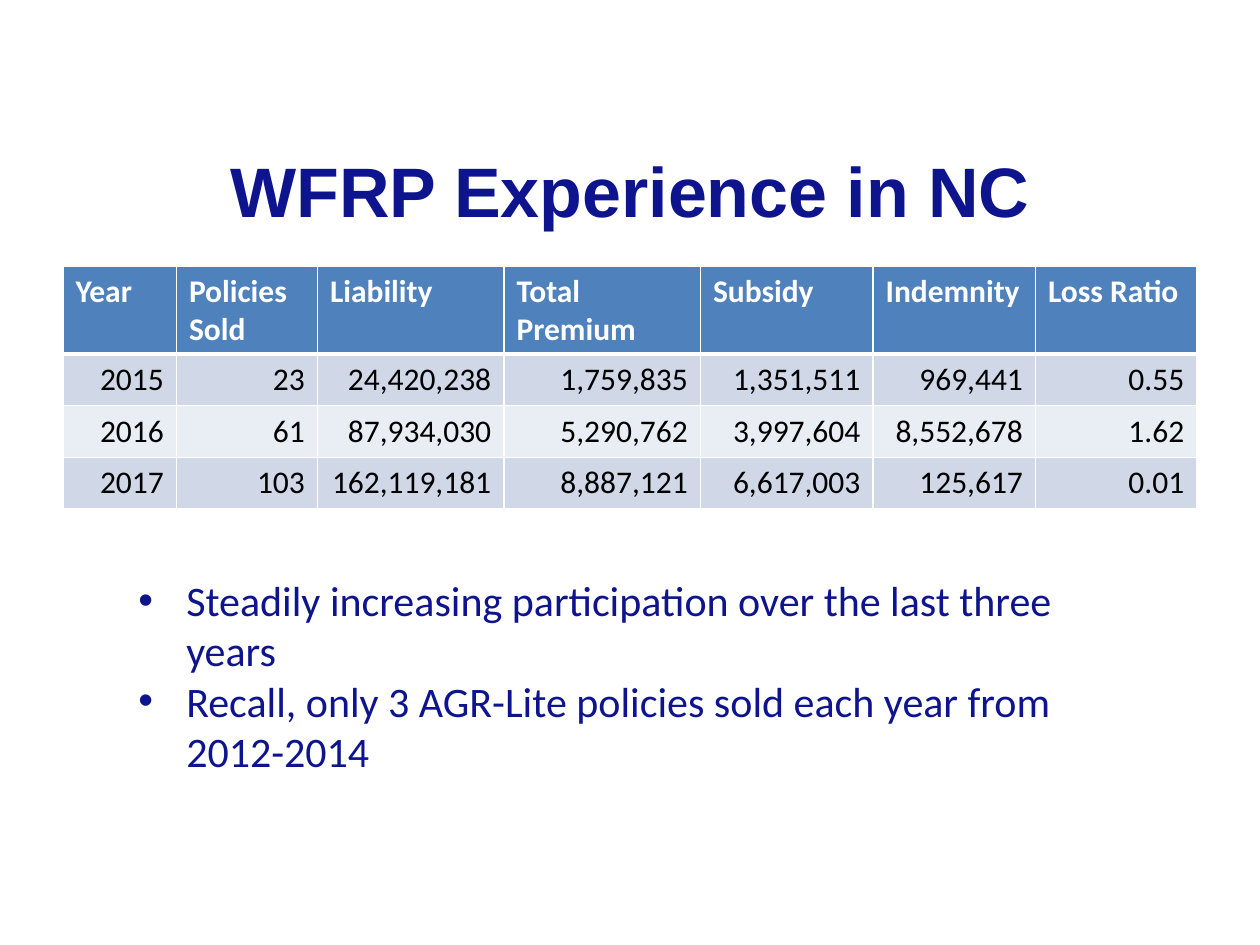
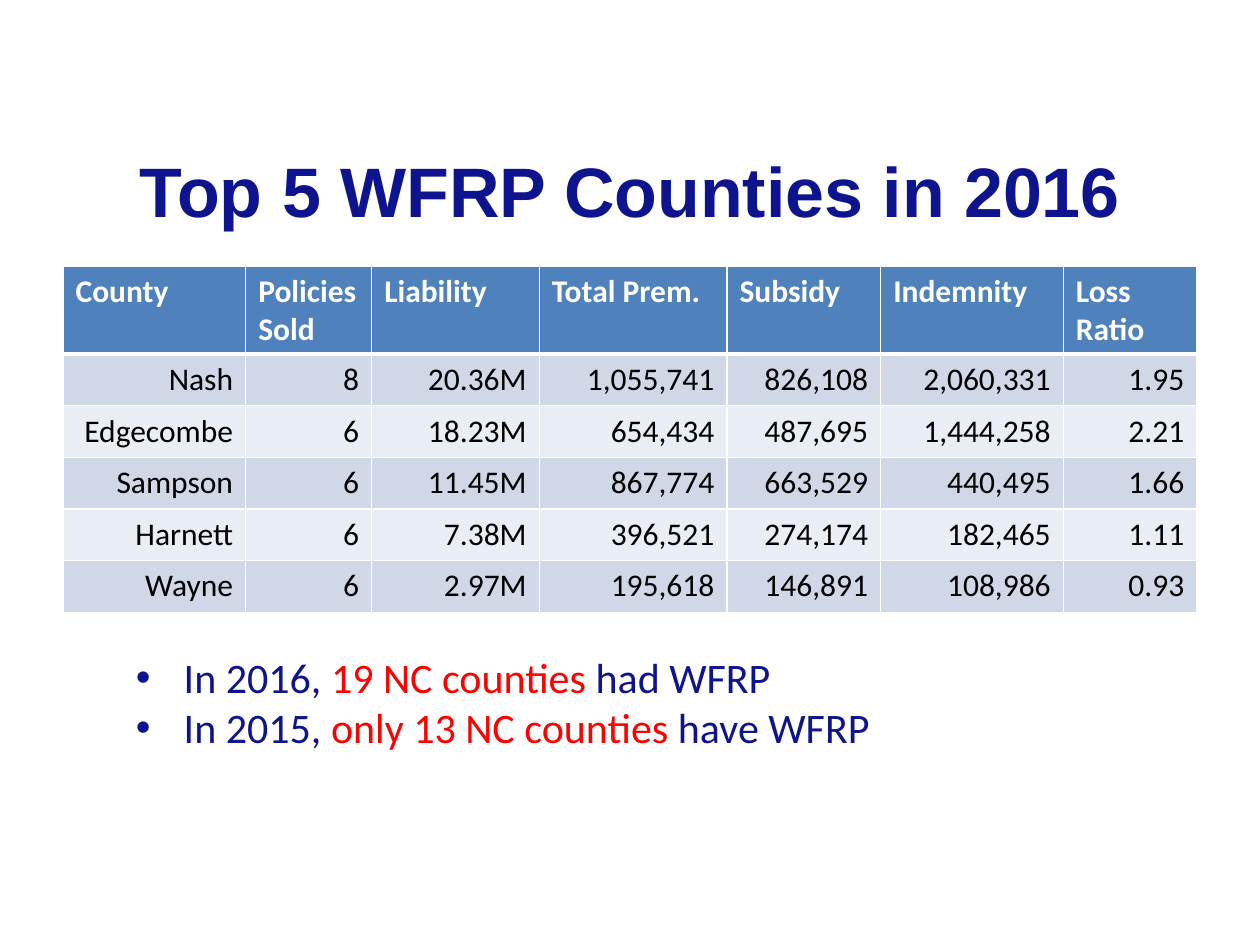
from dataclasses import dataclass

from lxml import etree
from pptx import Presentation, util as u
from pptx.dml.color import RGBColor
from pptx.enum import text
from pptx.oxml import ns


@dataclass(frozen=True)
class Theme:
    navy: str = "0E148E"
    red: str = "FF0000"
    white: str = "FFFFFF"
    black: str = "000000"
    header: str = "4F81BD"
    bands: tuple = ("D0D8E8", "E9EDF4")
    title_font: str = "Arial"
    body_font: str = "Calibri"
    title_size: int = 40
    note_size: int = 24
    cell_size: int = 18
    thin: int = 1
    thick: int = 3


THEME = Theme()
MARGIN, TITLE_TOP, TABLE_TOP = 0.5, 1.14, 2.11
CONTENT_WIDTH, TITLE_HEIGHT = 9, 0.73
HEADER_HEIGHT, ROW_HEIGHT = 0.7, 0.41
BULLET_INDENT = 0.38

SLIDES = [
    {
        "title": "WFRP Experience in NC",
        "columns": [("Year", 0.9), ("Policies Sold", 1.12), ("Liability", 1.48),
                    ("Total Premium", 1.56), ("Subsidy", 1.37),
                    ("Indemnity", 1.29), ("Loss Ratio", 1.28)],
        "rows": [
            ("2015", "23", "24,420,238", "1,759,835", "1,351,511", "969,441", "0.55"),
            ("2016", "61", "87,934,030", "5,290,762", "3,997,604", "8,552,678", "1.62"),
            ("2017", "103", "162,119,181", "8,887,121", "6,617,003", "125,617", "0.01"),
        ],
        "notes_at": (1, 4.51, 8.05, 1.72),
        "notes": [
            [("Steadily increasing participation over the last three years", THEME.navy)],
            [("Recall, only 3 AGR-Lite policies sold each year from 2012-2014", THEME.navy)],
        ],
    },
    {
        "title": "Top 5 WFRP Counties in 2016",
        "columns": [("County", 1.45), ("Policies Sold", 1), ("Liability", 1.33),
                    ("Total Prem.", 1.49), ("Subsidy", 1.22),
                    ("Indemnity", 1.45), ("Loss Ratio", 1.06)],
        "rows": [
            ("Nash", "8", "20.36M", "1,055,741", "826,108", "2,060,331", "1.95"),
            ("Edgecombe", "6", "18.23M", "654,434", "487,695", "1,444,258", "2.21"),
            ("Sampson", "6", "11.45M", "867,774", "663,529", "440,495", "1.66"),
            ("Harnett", "6", "7.38M", "396,521", "274,174", "182,465", "1.11"),
            ("Wayne", "6", "2.97M", "195,618", "146,891", "108,986", "0.93"),
        ],
        "notes_at": (0.98, 5.12, 8.05, 0.91),
        "notes": [
            [("In 2016, ", THEME.navy), ("19 NC counties ", THEME.red), ("had WFRP", THEME.navy)],
            [("In 2015, ", THEME.navy), ("only 13 NC counties ", THEME.red), ("have WFRP", THEME.navy)],
        ],
    },
]


def style(span, font, size, color, bold=False):
    span.font.name = font
    span.font.size = u.Pt(size)
    span.font.bold = bold
    span.font.color.rgb = RGBColor.from_string(color)


def add_box(page, left, top, width, height):
    box = page.shapes.add_textbox(*map(u.Inches, (left, top, width, height)))
    box.text_frame.word_wrap = True
    return box.text_frame


def add_title(page, title):
    frame = add_box(page, MARGIN, TITLE_TOP, CONTENT_WIDTH, TITLE_HEIGHT)
    frame.vertical_anchor = text.MSO_ANCHOR.MIDDLE
    frame.text = title
    para = frame.paragraphs[0]
    para.alignment = text.PP_ALIGN.CENTER
    style(para.runs[0], THEME.title_font, THEME.title_size, THEME.navy, True)


def add_borders(cell, widths):
    properties = cell._tc.get_or_add_tcPr()
    for side, width in widths.items():
        line = etree.SubElement(properties, ns.qn(f"a:ln{side}"), w=str(u.Pt(width)))
        fill = etree.SubElement(line, ns.qn("a:solidFill"))
        etree.SubElement(fill, ns.qn("a:srgbClr"), val=THEME.white)


def fill_cell(cell, value, row):
    is_header = row == 0
    add_borders(cell, {
        "L": THEME.thin,
        "R": THEME.thin,
        "T": THEME.thick if row == 1 else THEME.thin,
        "B": THEME.thick if is_header else THEME.thin,
    })
    cell.fill.solid()
    color = THEME.header if is_header else THEME.bands[(row - 1) % 2]
    cell.fill.fore_color.rgb = RGBColor.from_string(color)
    cell.text_frame.text = value
    para = cell.text_frame.paragraphs[0]
    para.alignment = text.PP_ALIGN.LEFT if is_header else text.PP_ALIGN.RIGHT
    style(para.runs[0], THEME.body_font, THEME.cell_size,
          THEME.white if is_header else THEME.black, is_header)


def add_data_table(page, columns, rows):
    labels, widths = zip(*columns)
    heights = [HEADER_HEIGHT] + [ROW_HEIGHT] * len(rows)
    table = page.shapes.add_table(
        len(heights), len(widths), u.Inches(MARGIN), u.Inches(TABLE_TOP),
        u.Inches(sum(widths)), u.Inches(sum(heights))).table
    for column, width in zip(table.columns, widths):
        column.width = u.Inches(width)
    for row, (height, values) in enumerate(zip(heights, [labels, *rows])):
        table.rows[row].height = u.Inches(height)
        for column, value in enumerate(values):
            fill_cell(table.cell(row, column), value, row)


def add_bullet(para):
    properties = para._p.get_or_add_pPr()
    indent = u.Inches(BULLET_INDENT)
    properties.set("marL", str(indent))
    properties.set("indent", str(-indent))
    etree.SubElement(properties, ns.qn("a:buFont"), typeface=THEME.title_font)
    etree.SubElement(properties, ns.qn("a:buChar"), char="•")


def add_notes(page, place, notes):
    frame = add_box(page, *place)
    for index, note in enumerate(notes):
        para = frame.add_paragraph() if index else frame.paragraphs[0]
        add_bullet(para)
        for words, color in note:
            span = para.add_run()
            span.text = words
            style(span, THEME.body_font, THEME.note_size, color)


def main():
    deck = Presentation()
    deck.slide_width, deck.slide_height = u.Inches(10), u.Inches(7.5)
    for content in SLIDES:
        page = deck.slides.add_slide(deck.slide_layouts[6])
        add_title(page, content["title"])
        add_data_table(page, content["columns"], content["rows"])
        add_notes(page, content["notes_at"], content["notes"])
    deck.save("out.pptx")


if __name__ == "__main__":
    main()
